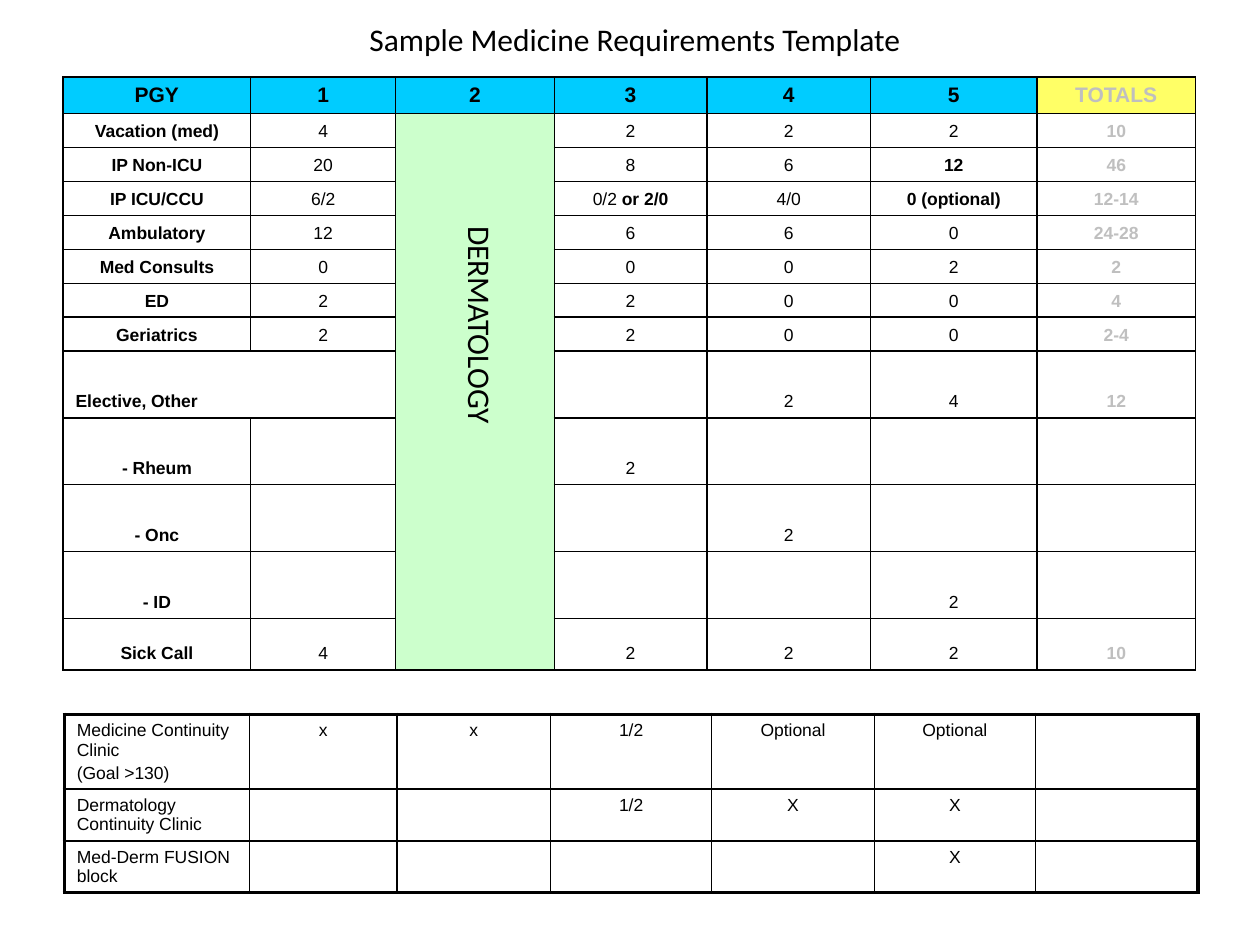
from lxml import etree
from pptx import Presentation
from pptx.dml.color import RGBColor
from pptx.enum.text import MSO_ANCHOR, PP_ALIGN
from pptx.oxml.ns import qn
from pptx.util import Inches, Pt

TOP, MIDDLE, BOTTOM = MSO_ANCHOR.TOP, MSO_ANCHOR.MIDDLE, MSO_ANCHOR.BOTTOM
LEFT, CENTER = PP_ALIGN.LEFT, PP_ALIGN.CENTER
BLACK = RGBColor(0x00, 0x00, 0x00)
GREY = RGBColor(0xBF, 0xBF, 0xBF)
BLUE = RGBColor(0x00, 0xCC, 0xFF)
YELLOW = RGBColor(0xFF, 0xFF, 0x66)
GREEN = RGBColor(0xCC, 0xFF, 0xCC)
THIN, THICK = 1, 2.25

# Content: a star starts bold text within a cell
TITLE = "Sample Medicine Requirements Template"
BLOCK = "DERMATOLOGY"
NEEDS = [
    ["PGY", "1", "2", "3", "4", "5", "TOTALS"],
    ["Vacation (med)", "4", "", "2", "2", "2", "10"],
    ["IP Non-ICU", "20", "", "8", "6", "*12", "46"],
    ["IP ICU/CCU", "6/2", "", "0/2 *or 2/0", "4/0", "*0 (optional)", "12-14"],
    ["Ambulatory", "12", "", "6", "6", "0", "24-28"],
    ["Med Consults", "0", "", "0", "0", "2", "2"],
    ["ED", "2", "", "2", "0", "0", "4"],
    ["Geriatrics", "2", "", "2", "0", "0", "2-4"],
    ["Elective, Other", "", "", "", "2", "4", "12"],
    ["- Rheum", "", "", "2", "", "", ""],
    ["- Onc", "", "", "", "2", "", ""],
    ["- ID", "", "", "", "", "2", ""],
    ["Sick Call", "4", "", "2", "2", "2", "10"],
]
CLINICS = [
    ["Medicine Continuity Clinic\n(Goal >130)", "x", "x", "1/2", "Optional", "Optional", ""],
    ["Dermatology Continuity Clinic", "", "", "1/2", "X", "X", ""],
    ["Med-Derm FUSION block", "", "", "", "", "X", ""],
]
NEED_COLS = [1.49, 1.15, 1.26, 1.21, 1.3, 1.32, 1.26]
NEED_ROWS = [0.29] + [0.27] * 7 + [0.53] * 4 + [0.41]
CLINIC_COLS = [1.47, 1.17, 1.22, 1.28, 1.29, 1.28, 1.29]
CLINIC_ROWS = [0.59, 0.41, 0.41]
ELECTIVE = 8
DERM = 2


def style(run, size, name, color=BLACK, bold=False):
    run.font.size = Pt(size)
    run.font.name = name
    run.font.bold = bold
    run.font.color.rgb = color


def border(cell, widths):
    props = cell._tc.get_or_add_tcPr()
    for side, width in zip("LRTB", widths):
        line = etree.SubElement(props, qn("a:ln" + side), w=str(int(Pt(width))))
        fill = etree.SubElement(line, qn("a:solidFill"))
        etree.SubElement(fill, qn("a:srgbClr"), val=str(BLACK))


def write(cell, text, size, align, anchor, color=BLACK, bold=False):
    cell.vertical_anchor = anchor
    for i, line in enumerate(text.split("\n")):
        frame = cell.text_frame
        para = frame.add_paragraph() if i else frame.paragraphs[0]
        para.alignment = align
        if i:
            para.space_before = Pt(2)
        for k, part in enumerate(line.split("*")):
            if part:
                run = para.add_run()
                run.text = part
                style(run, size, "Arial", color, bold or k > 0)
        # Keeps empty cells from growing their row
        etree.SubElement(para._p, qn("a:endParaRPr"), sz=str(size * 100))


def add_grid(slide, left, top, cols, rows, edge):
    grid = slide.shapes.add_table(
        len(rows), len(cols), Inches(left), Inches(top),
        Inches(sum(cols)), Inches(sum(rows))).table
    grid.first_row = grid.horz_banding = False
    for col, width in zip(grid.columns, cols):
        col.width = Inches(width)
    for row, height in zip(grid.rows, rows):
        row.height = Inches(height)
    for r in range(len(rows)):
        for c in range(len(cols)):
            cell = grid.cell(r, c)
            ends = (c == 0, c == len(cols) - 1, r == 0, r == len(rows) - 1)
            border(cell, [edge if end else THIN for end in ends])
            cell.fill.background()
    return grid


def paint(cell, color):
    cell.fill.solid()
    cell.fill.fore_color.rgb = color


def label(shape, text, left, top, width, height):
    shape.left, shape.top = Inches(left), Inches(top)
    shape.width, shape.height = Inches(width), Inches(height)
    frame = shape.text_frame
    frame.text = text
    frame.word_wrap = False
    frame.vertical_anchor = MIDDLE
    frame.paragraphs[0].alignment = CENTER
    style(frame.paragraphs[0].runs[0], 18, "Calibri")


def main():
    deck = Presentation()
    deck.slide_width, deck.slide_height = Inches(10), Inches(7.5)
    slide = deck.slides.add_slide(deck.slide_layouts[5])
    label(slide.shapes.title, TITLE, 2.74, 0.11, 4.6, 0.4)

    # Requirements by year
    needs = add_grid(slide, 0.5, 0.61, NEED_COLS, NEED_ROWS, THIN)
    last = len(NEED_COLS) - 1
    for r, row in enumerate(NEEDS):
        for c, text in enumerate(row):
            cell = needs.cell(r, c)
            align = LEFT if (r, c) == (ELECTIVE, 0) else CENTER
            write(cell, text, 10 if r else 12, align, BOTTOM,
                  GREY if c == last else BLACK, r == 0 or c in (0, last))
            if r == 0:
                paint(cell, YELLOW if c == last else BLUE)
    needs.cell(1, DERM).merge(needs.cell(len(NEEDS) - 1, DERM))
    paint(needs.cell(1, DERM), GREEN)
    needs.cell(ELECTIVE, 0).merge(needs.cell(ELECTIVE, 1))

    # Continuity clinics
    clinics = add_grid(slide, 0.51, 5.67, CLINIC_COLS, CLINIC_ROWS, THICK)
    for r, row in enumerate(CLINICS):
        for c, text in enumerate(row):
            write(clinics.cell(r, c), text, 10, CENTER if c else LEFT, TOP)

    # Turned label over the merged column
    box = slide.shapes.add_textbox(0, 0, 0, 0)
    label(box, BLOCK, 2.9, 2.38, 1.83, 0.4)
    box.rotation = 90

    deck.save("out.pptx")


if __name__ == "__main__":
    main()
